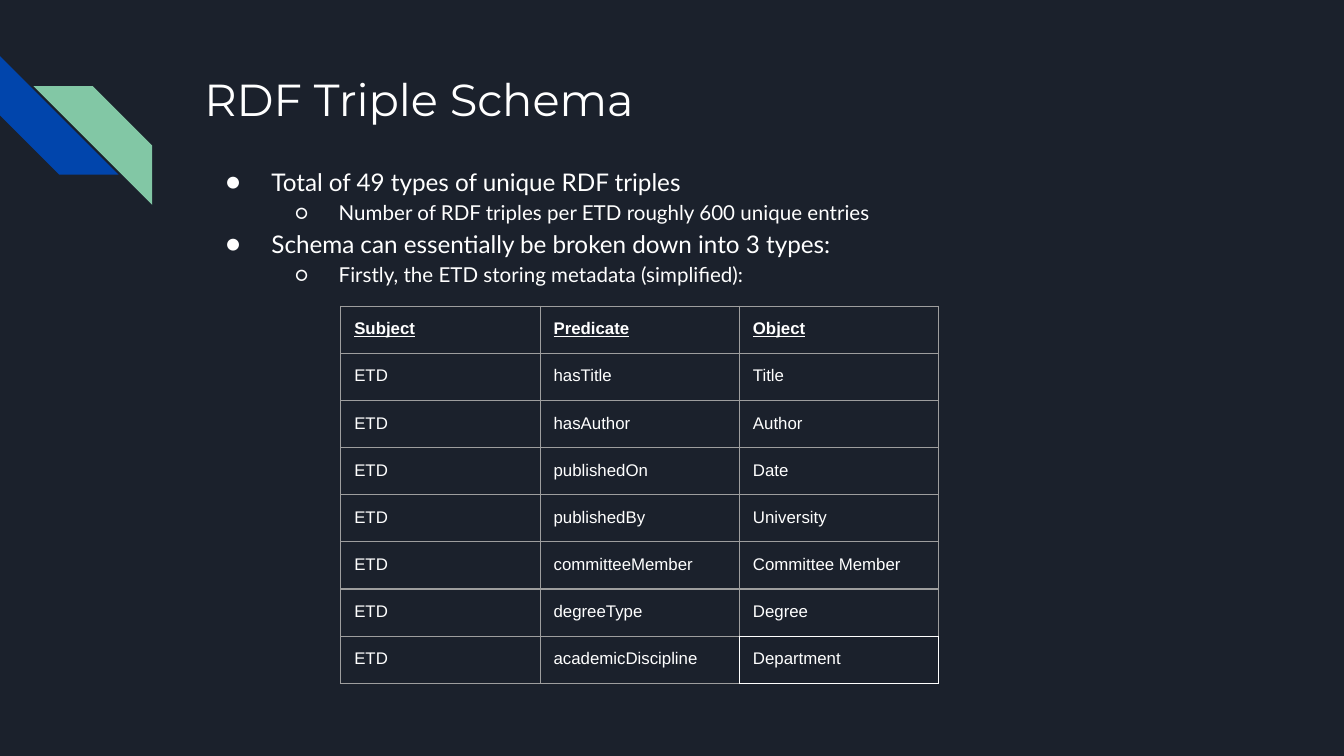
from typing import NamedTuple

from pptx import Presentation
from pptx.dml.color import RGBColor as RGB
from pptx.enum.shapes import MSO_SHAPE as Shape
from pptx.enum.text import MSO_ANCHOR as Anchor
from pptx.oxml.ns import qn
from pptx.util import Pt
from lxml.etree import SubElement

COLORS = {
    "background": "1B212C",
    "blue": "0145AC",
    "green": "82C7A5",
    "text": "FFFFFF",
    "grid": "9E9E9E",
}
INSET = 7.2


class Box(NamedTuple):
    left: float
    top: float
    width: float
    height: float


class Stripe(NamedTuple):
    box: Box
    color: str
    rotation: float = 0
    flipped: bool = False


class Level(NamedTuple):
    bullet: str
    size: float
    margin: float
    indent: float


class Bullet(NamedTuple):
    level: int
    text: str


STRIPES = [
    Stripe(Box(0, 30, 63.6, 63.6), "blue", rotation=270),
    Stripe(Box(18, 46.2, 63.6, 63.6), "green", flipped=True),
]
LEVELS = [Level("●", 13, 36, -24.4), Level("○", 11, 72, -23.4)]
BULLETS = [
    Bullet(0, "Total of 49 types of unique RDF triples"),
    Bullet(1, "Number of RDF triples per ETD roughly 600 unique entries"),
    Bullet(0, "Schema can essentially be broken down into 3 types:"),
    Bullet(1, "Firstly, the ETD storing metadata (simplified):"),
]
HEADER = ("Subject", "Predicate", "Object")
PREDICATES = {
    "hasTitle": "Title",
    "hasAuthor": "Author",
    "publishedOn": "Date",
    "publishedBy": "University",
    "committeeMember": "Committee Member",
    "degreeType": "Degree",
    "academicDiscipline": "Department",
}
TRIPLES = [HEADER] + [("ETD", pred, obj) for pred, obj in PREDICATES.items()]
COL_WIDTH, ROW_HEIGHT = 106.8, 24.45


def rgb(name: str) -> RGB:
    return RGB.from_string(COLORS[name])


def add_run(p, text: str, font: str, size: float, header: bool = False) -> None:
    r = p.add_run()
    r.text = text
    r.font.name, r.font.size = font, Pt(size)
    r.font.bold = r.font.underline = header
    r.font.color.rgb = rgb("text")


def add_stripe(s, stripe: Stripe) -> None:
    sp = s.shapes.add_shape(Shape.DIAGONAL_STRIPE, *map(Pt, stripe.box))
    sp.adjustments[0] = 0.5
    sp.rotation = stripe.rotation
    if stripe.flipped:
        sp._element.spPr.find(qn("a:xfrm")).set("flipH", "1")
    sp.shadow.inherit = False
    sp.fill.solid()
    sp.fill.fore_color.rgb = rgb(stripe.color)
    sp.line.fill.background()


def add_text_frame(s, box: Box):
    tf = s.shapes.add_textbox(*map(Pt, box)).text_frame
    tf.word_wrap = True
    tf.vertical_anchor = Anchor.TOP
    tf.margin_left = tf.margin_right = tf.margin_top = tf.margin_bottom = Pt(INSET)
    return tf


def add_bullet(p, item: Bullet) -> None:
    level = LEVELS[item.level]
    p.level = item.level
    p.line_spacing = 1.15
    pPr = p._p.get_or_add_pPr()
    pPr.set("marL", str(Pt(level.margin)))
    pPr.set("indent", str(Pt(level.indent)))
    color = SubElement(pPr, qn("a:buClr"))
    SubElement(color, qn("a:srgbClr"), val=COLORS["text"])
    SubElement(pPr, qn("a:buFont"), typeface="Lato")
    SubElement(pPr, qn("a:buChar"), char=level.bullet)
    add_run(p, item.text, "Lato", level.size)


def add_border(cell, side: str, color: str) -> None:
    ln = SubElement(cell._tc.get_or_add_tcPr(), qn(f"a:ln{side}"), w=str(Pt(0.75)))
    fill = SubElement(ln, qn("a:solidFill"))
    SubElement(fill, qn("a:srgbClr"), val=COLORS[color])


def add_triple_table(s, left: float, top: float) -> None:
    rows, cols = len(TRIPLES), len(HEADER)
    box = Box(left, top, cols * COL_WIDTH, rows * ROW_HEIGHT)
    table = s.shapes.add_table(rows, cols, *map(Pt, box)).table
    table.first_row = table.horz_banding = False
    # The last cell is outlined in white, shared edges included
    last = (rows - 1, cols - 1)
    white_edges = {(last, side) for side in "LRTB"}
    white_edges |= {((rows - 2, cols - 1), "B"), ((rows - 1, cols - 2), "R")}
    for col in table.columns:
        col.width = Pt(COL_WIDTH)
    for i, triple in enumerate(TRIPLES):
        table.rows[i].height = Pt(ROW_HEIGHT)
        for j, text in enumerate(triple):
            cell = table.cell(i, j)
            cell.margin_left = cell.margin_right = Pt(INSET)
            cell.margin_top = cell.margin_bottom = Pt(INSET)
            for side in "LRTB":
                add_border(cell, side, "text" if ((i, j), side) in white_edges else "grid")
            cell.fill.background()
            add_run(cell.text_frame.paragraphs[0], text, "Arial", 9, header=i == 0)


def main() -> None:
    prs = Presentation()
    prs.slide_width, prs.slide_height = Pt(720), Pt(405)
    s = prs.slides.add_slide(prs.slide_layouts[6])
    s.background.fill.solid()
    s.background.fill.fore_color.rgb = rgb("background")

    # Corner decoration
    for stripe in STRIPES:
        add_stripe(s, stripe)

    # Title
    tf = add_text_frame(s, Box(102.4, 31, 554.4, 72))
    add_run(tf.paragraphs[0], "RDF Triple Schema", "Montserrat", 24)

    # Bulleted overview
    tf = add_text_frame(s, Box(102.4, 80, 554.4, 229))
    for i, item in enumerate(BULLETS):
        add_bullet(tf.add_paragraph() if i else tf.paragraphs[0], item)

    # Metadata triples
    add_triple_table(s, 182.6, 164)

    prs.save("out.pptx")


if __name__ == "__main__":
    main()
